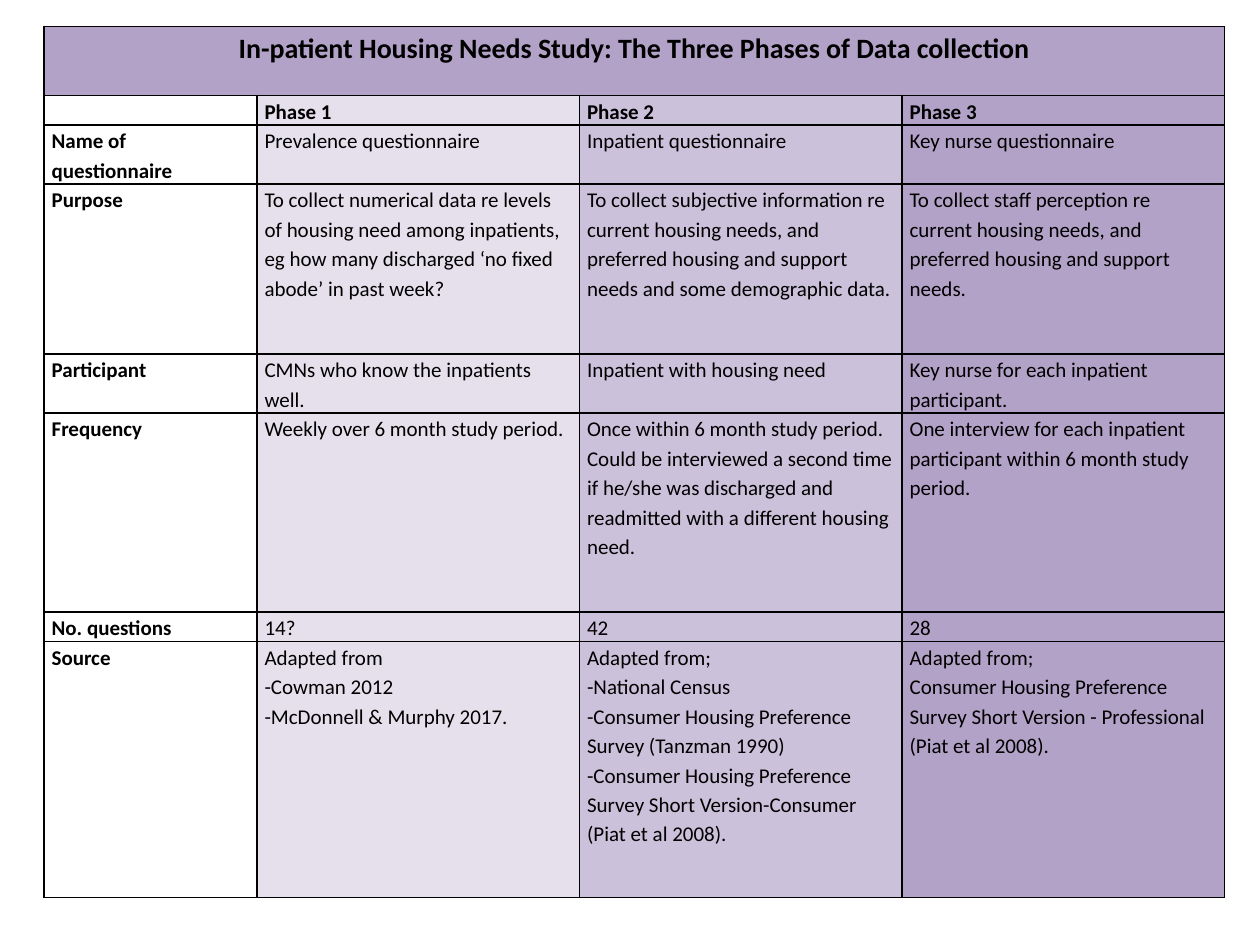
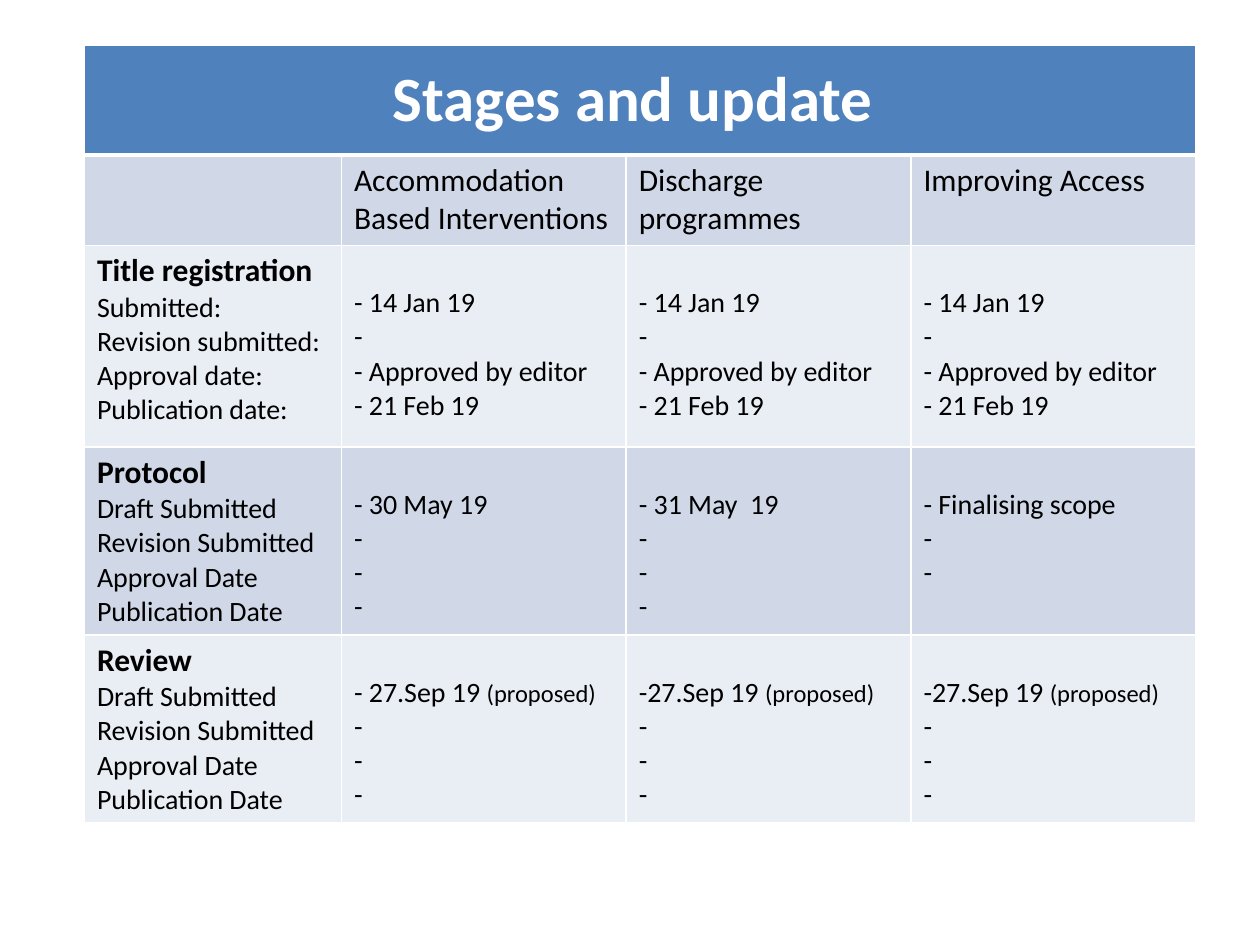
"""Build two table slides: the study phases and the review stages."""
from lxml import etree
from pptx import Presentation
from pptx.dml.color import RGBColor
from pptx.enum.text import MSO_ANCHOR, PP_ALIGN
from pptx.oxml.ns import qn
from pptx.util import Inches, Pt

TOP, MIDDLE = MSO_ANCHOR.TOP, MSO_ANCHOR.MIDDLE
LEFT, CENTER = PP_ALIGN.LEFT, PP_ALIGN.CENTER
FONT = "Calibri"
BLACK = RGBColor(0x00, 0x00, 0x00)
WHITE = RGBColor(0xFF, 0xFF, 0xFF)
PURPLE = RGBColor(0xB3, 0xA2, 0xC7)
LILAC = RGBColor(0xCC, 0xC1, 0xDA)
PALE_LILAC = RGBColor(0xE6, 0xE0, 0xEC)
BLUE = RGBColor(0x4F, 0x81, 0xBD)
LIGHT_BLUE = RGBColor(0xD0, 0xD8, 0xE8)
PALE_BLUE = RGBColor(0xE9, 0xED, 0xF4)

PHASE_TITLE = "In-patient Housing Needs Study: The Three Phases of Data collection"
PHASE_FILLS = [WHITE, PALE_LILAC, LILAC, PURPLE]
PHASE_ROWS = [
    (0.23, ["", "Phase 1", "Phase 2", "Phase 3"]),
    (0.46, ["Name of questionnaire", "Prevalence questionnaire",
            "Inpatient questionnaire", "Key nurse questionnaire"]),
    (1.35, ["Purpose",
            "To collect numerical data re levels of housing need among inpatients, "
            "eg how many discharged ‘no fixed abode’ in past week?",
            "To collect subjective information re current housing needs, and preferred "
            "housing and support needs and some demographic data.",
            "To collect staff perception re current housing needs, and preferred "
            "housing and support needs."]),
    (0.46, ["Participant", "CMNs who know the inpatients well.",
            "Inpatient with housing need", "Key nurse for each inpatient participant."]),
    (1.58, ["Frequency", "Weekly over 6 month study period.",
            "Once within 6 month study period. Could be interviewed a second time if "
            "he/she was discharged and readmitted with a different housing need.",
            "One interview for each inpatient participant within 6 month study period."]),
    (0.23, ["No. questions", "14?", "42", "28"]),
    (2.03, ["Source",
            "Adapted from\n-Cowman 2012\n-McDonnell & Murphy 2017.",
            "Adapted from;\n-National Census\n"
            "-Consumer Housing Preference Survey (Tanzman 1990)\n"
            "-Consumer Housing Preference Survey Short Version-Consumer (Piat et al 2008).",
            "Adapted from;\nConsumer Housing Preference Survey Short Version - "
            "Professional (Piat et al 2008)."]),
]

STAGE_TITLE = "Stages and update "
PROGRAMMES = ["", "Accommodation Based Interventions", "Discharge programmes",
              "Improving Access"]
REGISTERED = "- 14 Jan 19\n-\n- Approved by editor\n- 21 Feb 19"
DRAFT_STEPS = "Draft Submitted\nRevision Submitted\nApproval Date\nPublication Date"
PENDING = "\n-\n-\n-"
PROPOSED = "(proposed)"
STAGE_ROWS = [
    (1.6, ["Title registration\nSubmitted:\nRevision submitted:\nApproval date:\n"
           "Publication date:"] + [REGISTERED] * 3),
    (1.49, ["Protocol\n" + DRAFT_STEPS, "- 30 May 19" + PENDING,
            "- 31 May  19" + PENDING, "- Finalising scope\n-\n-"]),
    (1.49, ["Review\n" + DRAFT_STEPS, "- 27.Sep 19 " + PROPOSED + PENDING]
     + ["-27.Sep 19 " + PROPOSED + PENDING] * 2),
]
HEADING_LINE = 0.27


def set_borders(cell, color, bottom=1):
    """Draw the four edges of a cell."""
    properties = cell._tc.get_or_add_tcPr()
    for edge, width in (("lnL", 1), ("lnR", 1), ("lnT", 1), ("lnB", bottom)):
        line = etree.SubElement(properties, qn("a:" + edge), w=str(Pt(width)))
        fill = etree.SubElement(line, qn("a:solidFill"))
        etree.SubElement(fill, qn("a:srgbClr"), val=str(color))


def style(para, size, bold, color=BLACK, align=LEFT, spacing=None):
    """Format a whole paragraph."""
    para.font.name, para.font.size, para.font.bold = FONT, Pt(size), bold
    para.font.color.rgb = color
    para.alignment = align
    if spacing:
        para.line_spacing = spacing


def write(cell, text):
    """Fill a cell with one paragraph a line and return the paragraphs."""
    frame = cell.text_frame
    for index, words in enumerate(text.split("\n")):
        para = frame.add_paragraph() if index else frame.paragraphs[0]
        main, note, _ = words.partition(PROPOSED)
        if main:
            para.add_run().text = main
        if note:
            span = para.add_run()
            span.text, span.font.size = note, Pt(14)
    return frame.paragraphs


def add_grid(deck, left, top, widths, heights):
    """Add a page with a plain table whose first row is one merged cell."""
    page = deck.slides.add_slide(deck.slide_layouts[6])
    grid = page.shapes.add_table(
        len(heights), len(widths), Inches(left), Inches(top),
        Inches(sum(widths)), Inches(sum(heights))).table
    grid.first_row = grid.horz_banding = False
    for column, width in zip(grid.columns, widths):
        column.width = Inches(width)
    for row, height in zip(grid.rows, heights):
        row.height = Inches(height)
    grid.cell(0, 0).merge(grid.cell(0, len(widths) - 1))
    return grid


def paint(cell, fill, border, bottom=1):
    """Give a cell its edges and its fill."""
    set_borders(cell, border, bottom)
    cell.fill.solid()
    cell.fill.fore_color.rgb = fill


def build_phases(deck):
    """Add the table of the three phases."""
    heights = [0.55] + [height for height, _ in PHASE_ROWS]
    grid = add_grid(deck, 0.35, 0.21, [1.69] + [2.56] * 3, heights)
    rows = [[PHASE_TITLE, "", "", ""]] + [texts for _, texts in PHASE_ROWS]
    for row, texts in enumerate(rows):
        for column, text in enumerate(texts):
            cell = grid.cell(row, column)
            paint(cell, PHASE_FILLS[column] if row else PURPLE, BLACK)
            cell.margin_left = cell.margin_right = Inches(0.06)
            cell.margin_top = cell.margin_bottom = 0
            cell.vertical_anchor = TOP
            for para in write(cell, text):
                style(para, 12 if row else 16, row < 2 or column == 0,
                      align=LEFT if row else CENTER, spacing=1.15)


def build_stages(deck):
    """Add the table of stages and dates."""
    heights = [0.87, 0.72] + [height for height, _ in STAGE_ROWS]
    grid = add_grid(deck, 0.67, 0.36, [2.04] + [2.26] * 3, heights)
    rows = [[STAGE_TITLE, "", "", ""], PROGRAMMES] + [texts for _, texts in STAGE_ROWS]
    for row, texts in enumerate(rows):
        for column, text in enumerate(texts):
            cell = grid.cell(row, column)
            fill = (LIGHT_BLUE if row % 2 else PALE_BLUE) if row else BLUE
            paint(cell, fill, WHITE, 1 if row else 3)
            cell.vertical_anchor = TOP if row else MIDDLE
            if row > 1 and column:
                cell.margin_top = Inches(0.05 + HEADING_LINE)
            for index, para in enumerate(write(cell, text)):
                heading = row > 1 and column == 0 and index == 0
                if row == 0:
                    style(para, 36, True, WHITE, CENTER)
                else:
                    style(para, 18 if heading or row == 1 else 16, heading)


def main():
    """Create the deck and save it."""
    deck = Presentation()
    deck.slide_width, deck.slide_height = Inches(10), Inches(7.5)
    build_phases(deck)
    build_stages(deck)
    deck.save("out.pptx")


if __name__ == "__main__":
    main()
